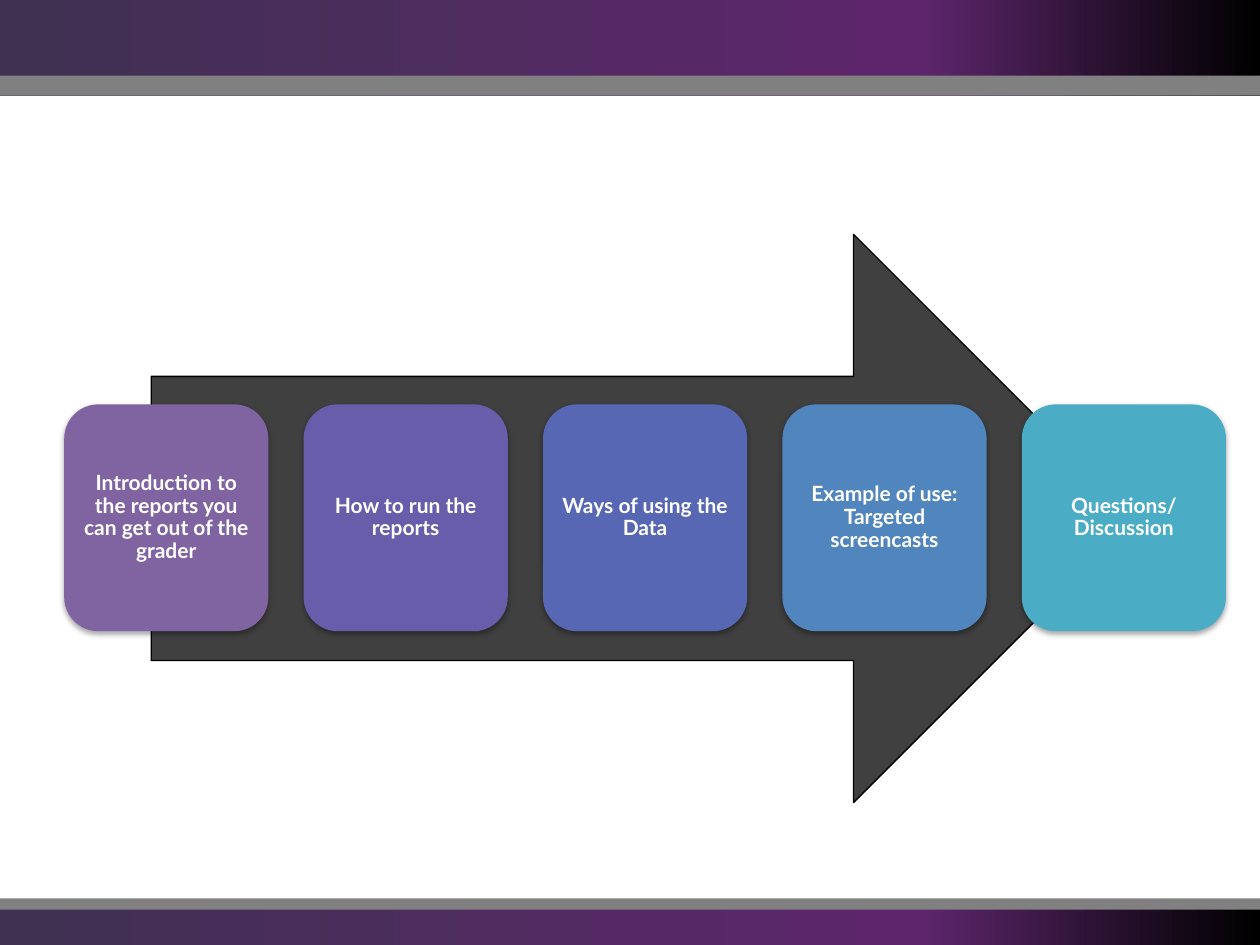
from copy import deepcopy
from pptx import Presentation
from pptx.dml.color import RGBColor
from pptx.enum.shapes import MSO_SHAPE as SHAPE
from pptx.enum.text import MSO_ANCHOR, PP_ALIGN
from pptx.oxml import parse_xml
from pptx.oxml.ns import nsdecls
from pptx.util import Inches, Pt

COLORS = {
    "arrow": "404040", "outline": "000000", "bar": "808080", "text": "FFFFFF",
    "band_start": "403152", "band_mid": "5D266C", "band_end": "000000",
    "intro": "8064A2", "run": "685DAB", "ways": "5767B4",
    "example": "5185BD", "questions": "4BACC6",
}
SHADOW = (
    f'<a:effectLst {nsdecls("a")}><a:outerShdw blurRad="40000" dist="23000" dir="5400000" '
    'rotWithShape="0"><a:srgbClr val="000000"><a:alpha val="35000"/></a:srgbClr>'
    "</a:outerShdw></a:effectLst>"
)


def add_box(kind, left, top, width, height, color):
    sp = s.shapes.add_shape(kind, Inches(left), Inches(top), Inches(width), Inches(height))
    sp.shadow.inherit = False
    sp.fill.solid()
    sp.fill.fore_color.rgb = RGBColor.from_string(COLORS[color])
    sp.line.fill.background()
    return sp


prs = Presentation()
prs.slide_width, prs.slide_height = Inches(10), Inches(7.5)
s = prs.slides.add_slide(prs.slide_layouts[6])

# Arrow behind the steps
arrow = add_box(SHAPE.RIGHT_ARROW, 1.2, 1.86, 7.83, 4.51, "arrow")
arrow.line.color.rgb = RGBColor.from_string(COLORS["outline"])
arrow.line.width = Pt(0.75)

# Step cards
steps = [
    ("intro", "Introduction to the reports you can get out of the grader"),
    ("run", "How to run the reports"),
    ("ways", "Ways of using the Data"),
    ("example", "Example of use: Targeted screencasts"),
    ("questions", "Questions/ Discussion"),
]
for i, (color, text) in enumerate(steps):
    sp = add_box(SHAPE.ROUNDED_RECTANGLE, 0.51 + i * 1.9, 3.21, 1.62, 1.8, color)
    effects = sp._element.spPr.find("{*}effectLst")
    effects.getparent().replace(effects, parse_xml(SHADOW))
    tf = sp.text_frame
    tf.word_wrap = True
    tf.vertical_anchor = MSO_ANCHOR.MIDDLE
    tf.margin_left = tf.margin_right = tf.margin_top = tf.margin_bottom = Inches(0.05)
    p = tf.paragraphs[0]
    p.alignment = PP_ALIGN.CENTER
    p.line_spacing = 0.9
    r = p.add_run()
    r.text = text
    r.font.name, r.font.size, r.font.bold = "Lato", Pt(12), True
    r.font.color.rgb = RGBColor.from_string(COLORS["text"])

# Gradient bands at the top and bottom edges
for top, height in ((0, 0.76), (7.15, 0.35)):
    band = add_box(SHAPE.RECTANGLE, 0, top, 10, height, "band_mid")
    band.fill.gradient()
    band.fill.gradient_angle = 0
    gs_list = band._element.spPr.find(".//{*}gsLst")
    gs_list.insert(1, deepcopy(gs_list[0]))
    stops = ((0, "band_start"), (0.73, "band_mid"), (1, "band_end"))
    for stop, (position, color) in zip(band.fill.gradient_stops, stops):
        stop.color.rgb = RGBColor.from_string(COLORS[color])
        stop.position = position

# Grey bars along the bands
for top, height in ((0.6, 0.16), (7.13, 0.09)):
    add_box(SHAPE.RECTANGLE, 0, top, 10, height, "bar")

prs.save("out.pptx")
